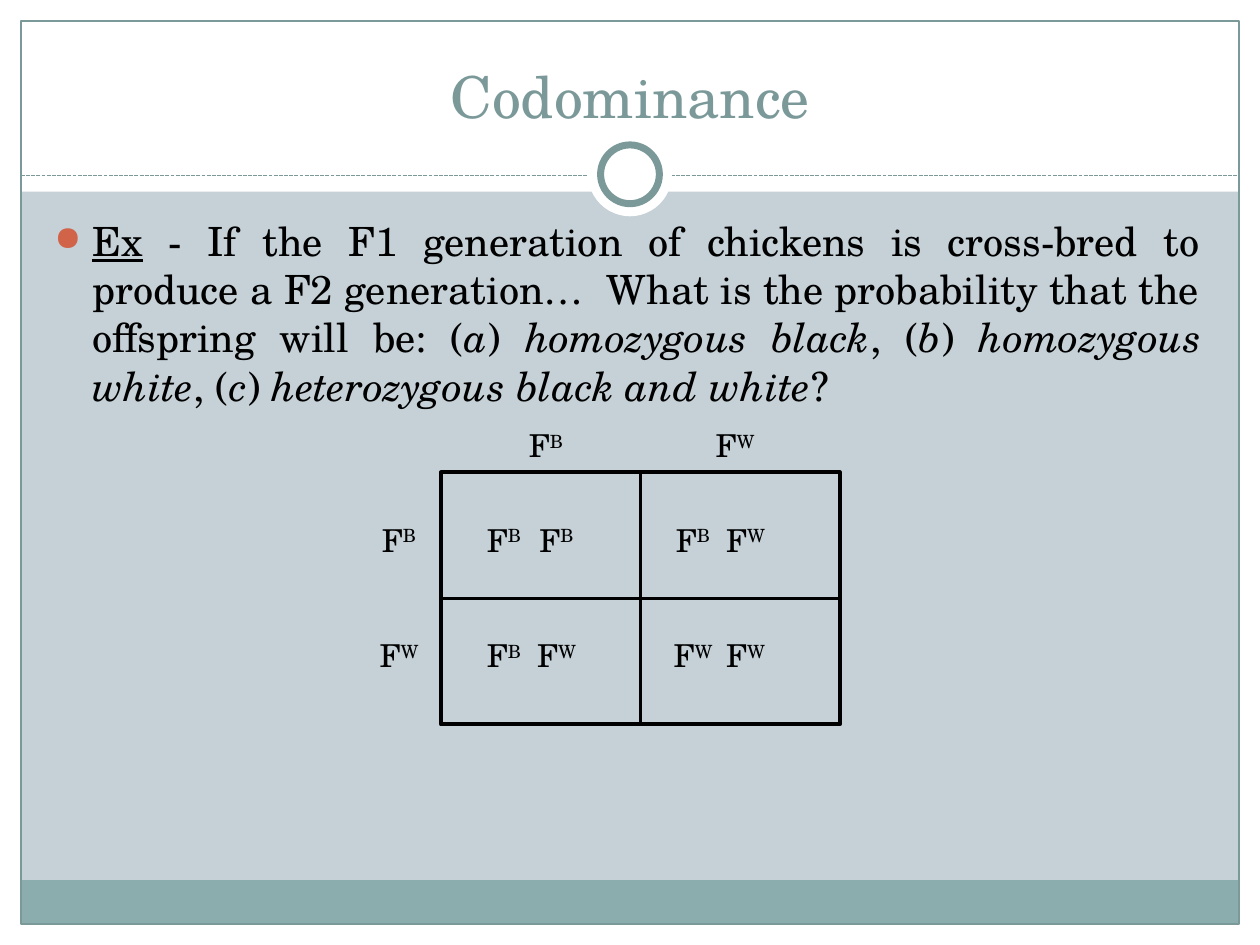
"""Build a slide on codominance with a Punnett square."""
from lxml import etree
from pptx import Presentation
from pptx.dml.color import RGBColor
from pptx.enum.dml import MSO_LINE
from pptx.enum.shapes import MSO_CONNECTOR, MSO_SHAPE
from pptx.enum.text import MSO_ANCHOR, MSO_AUTO_SIZE, PP_ALIGN
from pptx.oxml.ns import qn
from pptx.util import Pt

RECT, OVAL = MSO_SHAPE.RECTANGLE, MSO_SHAPE.OVAL
LINE, DASH = MSO_CONNECTOR.STRAIGHT, MSO_LINE.SQUARE_DOT
FONT = "TeX Gyre Schola"
INK = {name: RGBColor.from_string(code) for name, code in {
    "back": "C5D1D7", "white": "FFFFFF", "band": "8CADAE",
    "teal": "7C999A", "black": "000000"}.items()}
BULLET = "D16349"

deck = Presentation()
deck.slide_width, deck.slide_height = Pt(720), Pt(540)
slide = deck.slides.add_slide(deck.slide_layouts[5])
shapes = slide.shapes
slide.background.fill.solid()
slide.background.fill.fore_color.rgb = INK["back"]


def style(run, size, ink="black"):
    run.font.name, run.font.size = FONT, Pt(size)
    run.font.color.rgb = INK[ink]


def letter(x, y, allele):
    box = shapes.add_textbox(Pt(x), Pt(y), Pt(48), Pt(29))
    frame = box.text_frame
    frame.word_wrap = True
    frame.auto_size = MSO_AUTO_SIZE.SHAPE_TO_FIT_TEXT
    para = frame.paragraphs[0]
    para.alignment = PP_ALIGN.CENTER
    for text in ("F", allele):
        run = para.add_run()
        run.text = text
        style(run, 18)
    list(box.element.iter(qn("a:rPr")))[1].set("baseline", "30000")


forms = [
    (RECT, 0, 528, 720, 12, "white", None, 0),
    (RECT, 0, 0, 720, 109.5, "white", None, 0),
    (RECT, 0, 0, 12, 540, "white", None, 0),
    (RECT, 708, 0, 12, 540, "white", None, 0),
    (RECT, 11.75, 503, 696, 24.5, "band", None, 0),
    (RECT, 12, 12, 696, 516, None, "teal", 0.75),
    (OVAL, 336, 75.6, 48, 48, "white", None, 0),
    (OVAL, 343.2, 82.8, 33.6, 33.6, "white", "teal", 4),
    (RECT, 252, 270, 228, 144, None, "black", 2.25),
]
lines = [
    (12, 100.5, 708, 100.5, "teal", 0.75),
    (366, 270, 366, 414, "black", 2.25),
    (252, 342, 480, 342, "black", 2.25),
]
rule = None
for kind, x, y, wide, high, fill, edge, weight in forms:
    form = shapes.add_shape(kind, Pt(x), Pt(y), Pt(wide), Pt(high))
    form.shadow.inherit = False
    if fill:
        form.fill.solid()
        form.fill.fore_color.rgb = INK[fill]
    else:
        form.fill.background()
    if edge:
        form.line.color.rgb = INK[edge]
        form.line.width = Pt(weight)
    else:
        form.line.fill.background()
    if kind == OVAL and rule is None:
        rule = form

for x, y, right, low, ink, weight in lines:
    line = shapes.add_connector(LINE, Pt(x), Pt(y), Pt(right), Pt(low))
    line.line.color.rgb = INK[ink]
    line.line.width = Pt(weight)
    etree.SubElement(line.element.spPr, qn("a:effectLst"))
    if ink == "teal":
        line.line.dash_style = DASH
        rule.element.addprevious(line.element)

title = shapes.title
title.left, title.top, title.width, title.height = Pt(24), Pt(18), Pt(672), Pt(60)
title.text_frame.text = "Codominance"
title.text_frame.vertical_anchor = MSO_ANCHOR.BOTTOM
title.text_frame.paragraphs[0].alignment = PP_ALIGN.CENTER
style(title.text_frame.paragraphs[0].runs[0], 33, "teal")
title.element.getparent().append(title.element)

body = shapes.add_textbox(Pt(24), Pt(120), Pt(669.5), Pt(407.5))
body.text_frame.word_wrap = True
para = body.text_frame.paragraphs[0]
para.alignment = PP_ALIGN.JUSTIFY
para.space_before = Pt(4.6)
props = para._p.get_or_add_pPr()
props.set("marL", str(Pt(21.6)))
props.set("indent", str(Pt(-21.6)))
tint = etree.SubElement(props, qn("a:buClr"))
etree.SubElement(tint, qn("a:srgbClr"), val=BULLET)
etree.SubElement(props, qn("a:buSzPct"), val="85000")
etree.SubElement(props, qn("a:buChar"), char="●")
parts = [
    ("Ex", "u"),
    (" - If the F1 generation of chickens is cross-bred to produce a F2 "
     "generation…  What is the probability that the offspring will be: (", ""),
    ("a", "i"), (") ", ""), ("homozygous black", "i"), (", (", ""),
    ("b", "i"), (") ", ""), ("homozygous white", "i"), (", (", ""),
    ("c", "i"), (") ", ""), ("heterozygous black and white", "i"), ("?", ""),
]
for text, mark in parts:
    run = para.add_run()
    run.text = text
    style(run, 23)
    run.font.underline = mark == "u"
    run.font.italic = mark == "i"

for i, side in enumerate("BW"):
    letter(288 + 108 * i, 240, side)
    y = 294 + 66 * i
    letter(204, y, side)
    for j, top in enumerate("BW"):
        for k, allele in enumerate(sorted(side + top)):
            letter(264 + 108 * j + 30 * k, y, allele)

deck.save("out.pptx")
